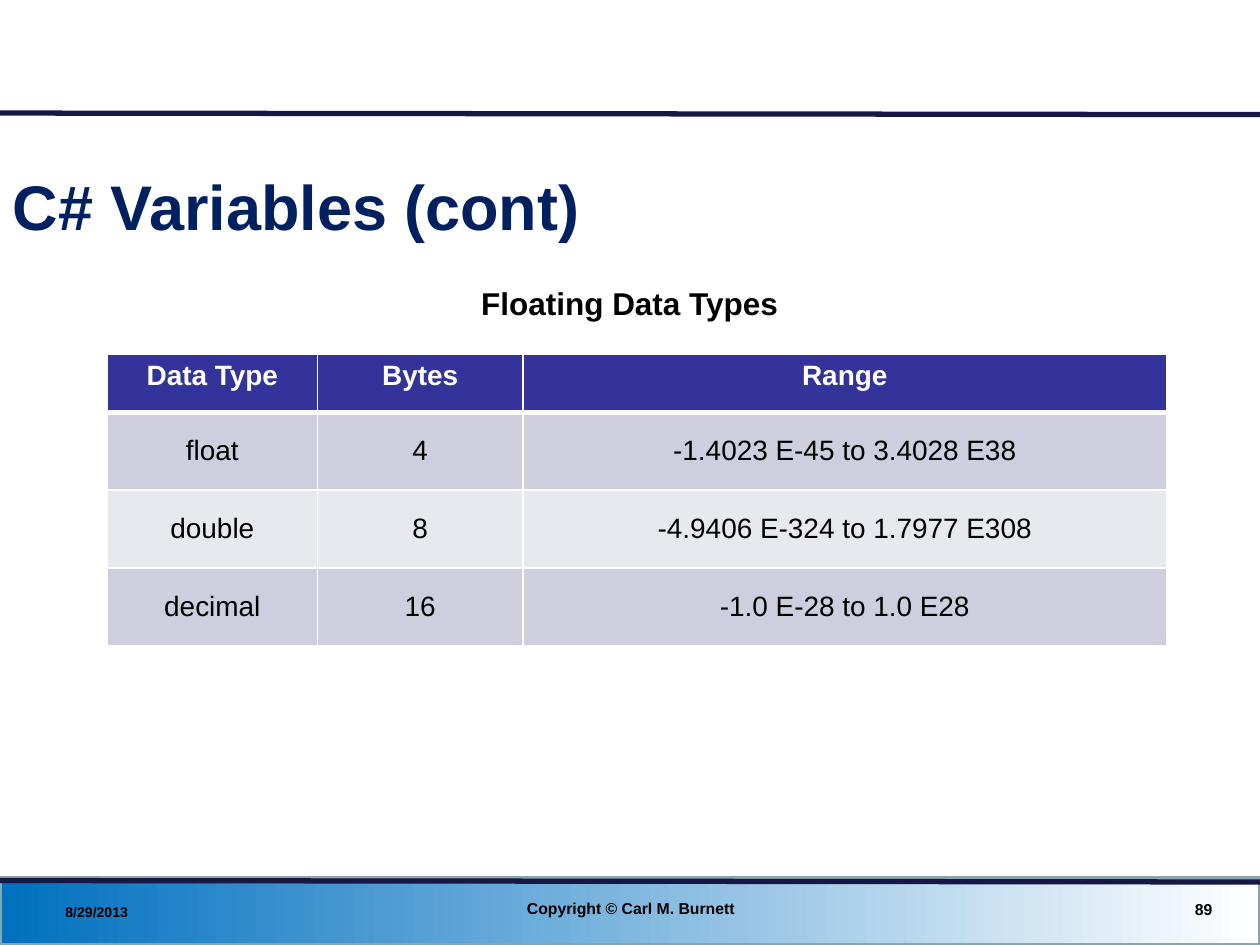
from typing import NamedTuple

from lxml import etree
from pptx import Presentation
from pptx.dml.color import RGBColor
from pptx.enum import shapes, text
from pptx.oxml import ns
from pptx.util import Cm, Pt

FONT = "Arial"
COLORS = {
    "title": "002060",
    "ink": "000000",
    "white": "FFFFFF",
    "rule": "171745",
    "band_start": "0070C0",
    "band_edge": "8AA6A8",
    "header": "333399",
    "odd_row": "CECEDE",
    "even_row": "E8E8EF",
}
LEFT, CENTER, RIGHT = text.PP_ALIGN.LEFT, text.PP_ALIGN.CENTER, text.PP_ALIGN.RIGHT
TOP, MIDDLE = text.MSO_ANCHOR.TOP, text.MSO_ANCHOR.MIDDLE


class Label(NamedTuple):
    """A line of text with its box in centimetres."""
    words: str
    left: float
    top: float
    width: float
    height: float
    size: float
    align: text.PP_ALIGN
    anchor: text.MSO_ANCHOR = MIDDLE
    wrap: bool = True


class Rule(NamedTuple):
    """A line across the slide, with its end heights in centimetres."""
    start_y: float
    end_y: float


LABELS = [
    Label("8/29/2013", 1.07, 18.03, 5.92, 0.69, 8, LEFT),
    Label("89", 18.77, 17.96, 5.92, 0.74, 9, RIGHT),
    Label("Copyright © Carl M. Burnett", 8.69, 17.93, 8.05, 0.74, 9, CENTER),
    Label("Floating Data Types", 9.42, 5.61, 6.55, 1.02, 18, CENTER, TOP, False),
]
RULES = [Rule(17.75, 17.78), Rule(2.28, 2.31)]
DATA_TYPES = [
    ("Data Type", "Bytes", "Range"),
    ("float", "4", "-1.4023 E-45 to 3.4028 E38"),
    ("double", "8", "-4.9406 E-324 to 1.7977 E308"),
    ("decimal", "16", "-1.0 E-28 to 1.0 E28"),
]
COLUMN_WIDTHS = [4.24, 4.14, 12.98]
HEADER_HEIGHT, ROW_HEIGHT = 1.17, 1.57


def rgb(name: str) -> RGBColor:
    return RGBColor.from_string(COLORS[name])


def write(frame, words: str, *, size: float, color: str = "ink",
          bold: bool = True, align: text.PP_ALIGN = LEFT) -> None:
    paragraph = frame.paragraphs[0]
    paragraph.alignment = align
    run = paragraph.add_run()
    run.text = words
    run.font.name = FONT
    run.font.size = Pt(size)
    run.font.bold = bold
    run.font.color.rgb = rgb(color)


def add_footer_band(slide) -> None:
    band = slide.shapes.add_shape(
        shapes.MSO_SHAPE.RECTANGLE, 0, Cm(17.7), Cm(25.4), Cm(1.35))
    band.shadow.inherit = False
    band.fill.gradient()
    band.fill.gradient_angle = 0
    for stop, position, color in zip(
            band.fill.gradient_stops, (0, 1), ("band_start", "white")):
        stop.position = position
        stop.color.rgb = rgb(color)
    band.line.color.rgb = rgb("band_edge")
    band.line.width = Pt(2)


def add_rule(slide, rule: Rule) -> None:
    line = slide.shapes.add_connector(
        shapes.MSO_CONNECTOR.STRAIGHT, 0, Cm(rule.start_y), Cm(25.4), Cm(rule.end_y))
    line.line.color.rgb = rgb("rule")
    line.line.width = Pt(3)
    etree.SubElement(line._element.spPr, ns.qn("a:effectLst"))


def add_label(slide, label: Label) -> None:
    box = slide.shapes.add_textbox(
        Cm(label.left), Cm(label.top), Cm(label.width), Cm(label.height))
    frame = box.text_frame
    frame.word_wrap = label.wrap
    frame.vertical_anchor = label.anchor
    write(frame, label.words, size=label.size, align=label.align)


def add_borders(cell, bottom: float) -> None:
    """White borders of 1 pt, with the bottom one of the given width."""
    properties = cell._tc.get_or_add_tcPr()
    for side, width in (("L", 1), ("R", 1), ("T", 1), ("B", bottom)):
        border = etree.SubElement(properties, ns.qn(f"a:ln{side}"), w=str(Pt(width)))
        fill = etree.SubElement(border, ns.qn("a:solidFill"))
        etree.SubElement(fill, ns.qn("a:srgbClr"), val=COLORS["white"])


def add_data_types(slide) -> None:
    heights = [HEADER_HEIGHT] + [ROW_HEIGHT] * (len(DATA_TYPES) - 1)
    table = slide.shapes.add_table(
        len(DATA_TYPES), len(COLUMN_WIDTHS), Cm(2.16), Cm(7.14),
        Cm(sum(COLUMN_WIDTHS)), Cm(sum(heights))).table
    for column, width in zip(table.columns, COLUMN_WIDTHS):
        column.width = Cm(width)
    for index, (height, values) in enumerate(zip(heights, DATA_TYPES)):
        table.rows[index].height = Cm(height)
        header = index == 0
        fill = "header" if header else "odd_row" if index % 2 else "even_row"
        for cell, value in zip(table.rows[index].cells, values):
            # The top edge of the first data row is the header's thick border.
            add_borders(cell, bottom=3 if header else 1)
            cell.fill.solid()
            cell.fill.fore_color.rgb = rgb(fill)
            cell.vertical_anchor = TOP if header else MIDDLE
            write(cell.text_frame, value, size=16, bold=header,
                  color="white" if header else "ink", align=CENTER)


def add_title(slide, words: str) -> None:
    title = slide.shapes.title
    title.left, title.top, title.width, title.height = (
        Cm(0), Cm(2.9), Cm(24.33), Cm(2.46))
    title.text_frame.auto_size = text.MSO_AUTO_SIZE.NONE
    title.text_frame.vertical_anchor = MIDDLE
    write(title.text_frame, words, size=36, color="title")


def main() -> None:
    deck = Presentation()
    deck.slide_width, deck.slide_height = Cm(25.4), Cm(19.05)
    slide = deck.slides.add_slide(deck.slide_layouts.get_by_name("Title Only"))
    add_footer_band(slide)
    for rule in RULES:
        add_rule(slide, rule)
    add_title(slide, "C# Variables (cont)")
    for label in LABELS:
        add_label(slide, label)
    add_data_types(slide)
    deck.save("out.pptx")


if __name__ == "__main__":
    main()
